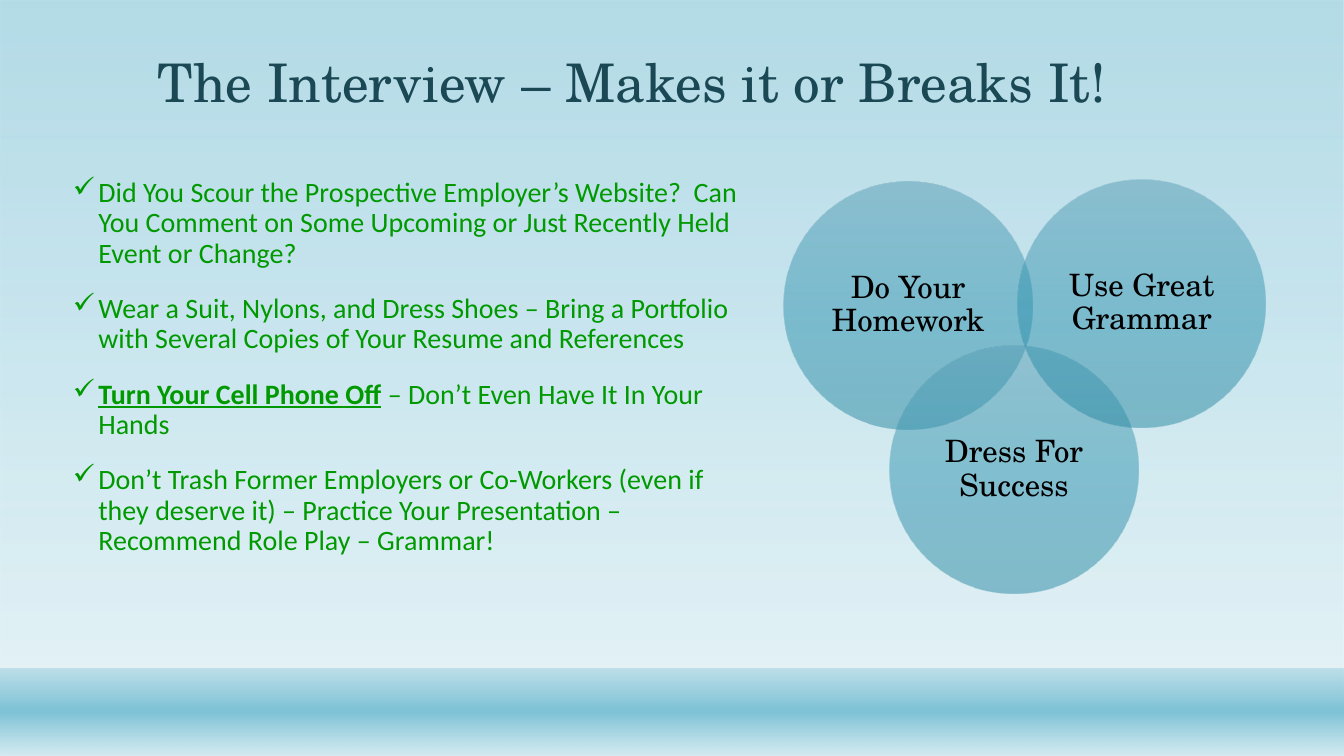
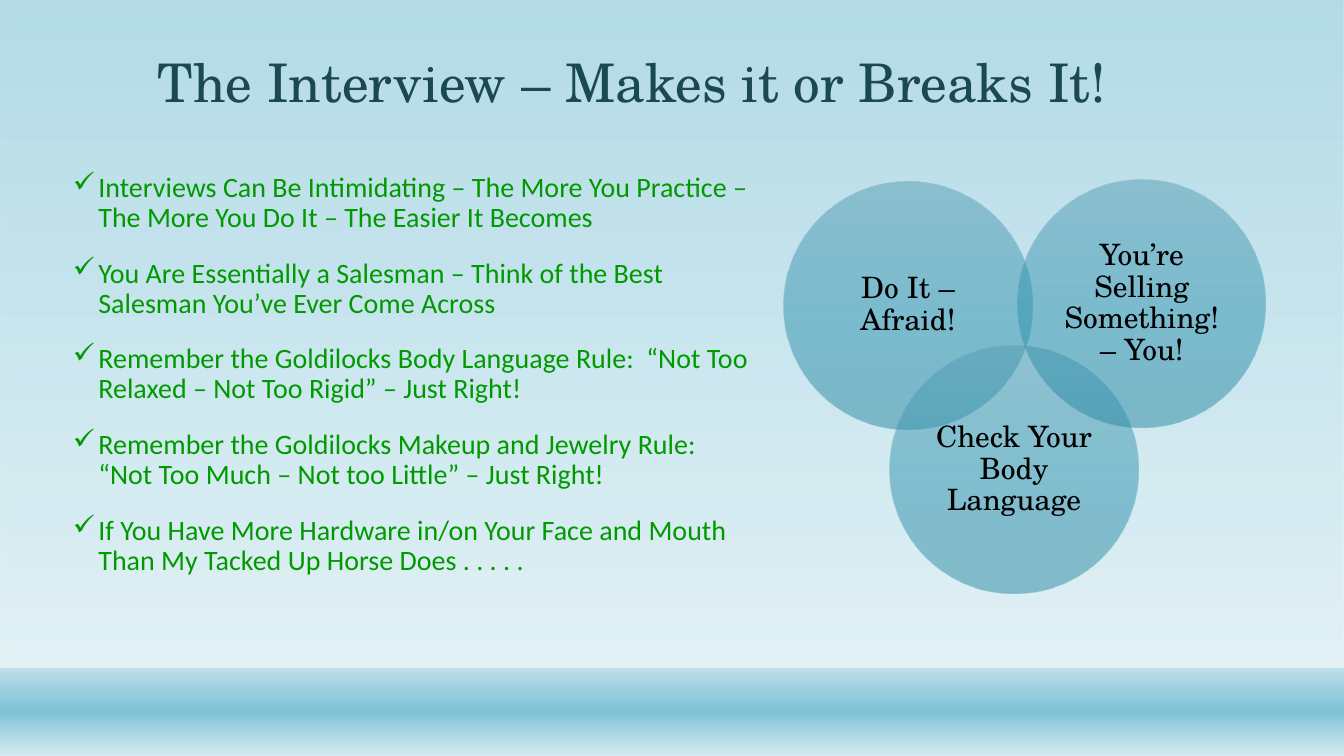
from lxml import etree
from pptx import Presentation
from pptx import util as u
from pptx.dml.color import RGBColor
from pptx.enum import shapes, text
from pptx.oxml.ns import qn

WIDE, HIGH = 33.87, 19.05
BAND = 2.21
ROUND = 6.25
SPOTS = [(19.76, 4.57), (22.43, 8.71), (25.65, 4.52)]
SERIF, SANS = "TeX Gyre Schola", "Calibri"
TITLE = "The Interview – Makes it or Breaks It!"
HUES = {
    "aqua": "7DC2D6", "pale": "D4EBF1", "navy": "1B4855", "green": "009900",
    "black": "000000", "steel": "589EB5", "teal": "3094B0", "deep": "2687A1",
}
# Gradient stops: position %, colour name, opacity %
SKY = [(0, "aqua", 58), (88, "pale", 65)]
WATER = [(1, "aqua", 38), (49, "aqua", 100), (100, "pale", 89)]
GLASS = [(0, "steel", 50), (50, "teal", 50), (100, "deep", 50)]

# Each slide: body top, body height, points, circle text size, circle labels
PAGES = [
    (4.37, 11.51, [
        "Did You Scour the Prospective Employer’s Website?  Can You Comment on "
        "Some Upcoming or Just Recently Held Event or Change?",
        "Wear a Suit, Nylons, and Dress Shoes – Bring a Portfolio with Several "
        "Copies of Your Resume and References",
        [("Turn Your Cell Phone Off", True),
         (" – Don’t Even Have It In Your Hands", False)],
        "Don’t Trash Former Employers or Co-Workers (even if they deserve it) – "
        "Practice Your Presentation – Recommend Role Play – Grammar!",
    ], 22, ["Do Your Homework", "Dress For Success", "Use Great Grammar"]),
    (4.24, 12.27, [
        "Interviews Can Be Intimidating – The More You Practice – The More You "
        "Do It – The Easier It Becomes",
        "You Are Essentially a Salesman – Think of the Best Salesman You’ve "
        "Ever Come Across",
        "Remember the Goldilocks Body Language Rule:  “Not Too Relaxed – Not "
        "Too Rigid” – Just Right!",
        "Remember the Goldilocks Makeup and Jewelry Rule: “Not Too Much – Not "
        "too Little” – Just Right!",
        "If You Have More Hardware in/on Your Face and Mouth Than My Tacked Up "
        "Horse Does . . . . .",
    ], 21, ["Do It – Afraid!", "Check Your Body Language",
            "You’re Selling Something! – You!"]),
]


def check(para):
    """Give a paragraph a hanging check-mark bullet."""
    props = para._p.get_or_add_pPr()
    props.set("marL", str(u.Cm(0.76)))
    props.set("indent", str(u.Cm(-0.64)))
    etree.SubElement(props, qn("a:buChar")).set("char", "✓")


def write(frame, paras, size, hue, font=SERIF, align=text.PP_ALIGN.LEFT,
          anchor=text.MSO_ANCHOR.TOP, gap=0, mark=False):
    """Fill a frame; a paragraph is a string or a list of (text, strong) runs."""
    frame.word_wrap = True
    frame.vertical_anchor = anchor
    for i, item in enumerate(paras):
        para = frame.add_paragraph() if i else frame.paragraphs[0]
        if mark:
            check(para)
        para.alignment = align
        para.line_spacing = 0.9
        if i:
            para.space_before = u.Pt(gap)
        for words, strong in [(item, False)] if isinstance(item, str) else item:
            run = para.add_run()
            run.text = words
            run.font.name, run.font.size = font, u.Pt(size)
            run.font.bold = run.font.underline = strong
            run.font.color.rgb = RGBColor.from_string(HUES[hue])


def label(slide, box, paras, **form):
    frame = slide.shapes.add_textbox(*map(u.Cm, box)).text_frame
    write(frame, paras, **form)


def blend(shape, stops):
    """Fill a shape from top to bottom with translucent gradient stops."""
    shape.fill.gradient()
    shape.fill.gradient_angle = 270
    ramp = shape._element.spPr.find(qn("a:gradFill")).find(qn("a:gsLst"))
    for old in list(ramp):
        ramp.remove(old)
    for place, hue, solid in stops:
        stop = etree.SubElement(ramp, qn("a:gs"), pos=str(place * 1000))
        tint = etree.SubElement(stop, qn("a:srgbClr"), val=HUES[hue])
        etree.SubElement(tint, qn("a:alpha"), val=str(solid * 1000))


def draw(slide, kind, box, stops):
    shape = slide.shapes.add_shape(kind, *map(u.Cm, box))
    shape.shadow.inherit = False
    shape.line.fill.background()
    blend(shape, stops)
    return shape


def base(slide):
    """Draw the background, lower band and title that all slides share."""
    rect = shapes.MSO_SHAPE.RECTANGLE
    draw(slide, rect, (0, 0, WIDE, HIGH), SKY)
    draw(slide, rect, (0, HIGH - BAND, WIDE, BAND), WATER)
    label(slide, (3.73, 0.74, 26.42, 2.26), [TITLE], size=38, hue="navy",
          anchor=text.MSO_ANCHOR.BOTTOM)


def venn(slide, names, size):
    for spot, name in zip(SPOTS, names):
        disc = draw(slide, shapes.MSO_SHAPE.OVAL, (*spot, ROUND, ROUND), GLASS)
        frame = disc.text_frame
        frame.margin_left = frame.margin_right = u.Cm(0.23)
        frame.margin_top = frame.margin_bottom = u.Cm(0.23)
        write(frame, [name], size=size, hue="black",
              align=text.PP_ALIGN.CENTER, anchor=text.MSO_ANCHOR.MIDDLE)


def main():
    deck = Presentation()
    deck.slide_width, deck.slide_height = u.Cm(WIDE), u.Cm(HIGH)
    for top, tall, points, size, names in PAGES:
        slide = deck.slides.add_slide(deck.slide_layouts[6])
        base(slide)
        label(slide, (1.47, top, 17.73, tall), points, size=20, hue="green",
              font=SANS, gap=18, mark=True)
        venn(slide, names, size)
    deck.save("out.pptx")


if __name__ == "__main__":
    main()
